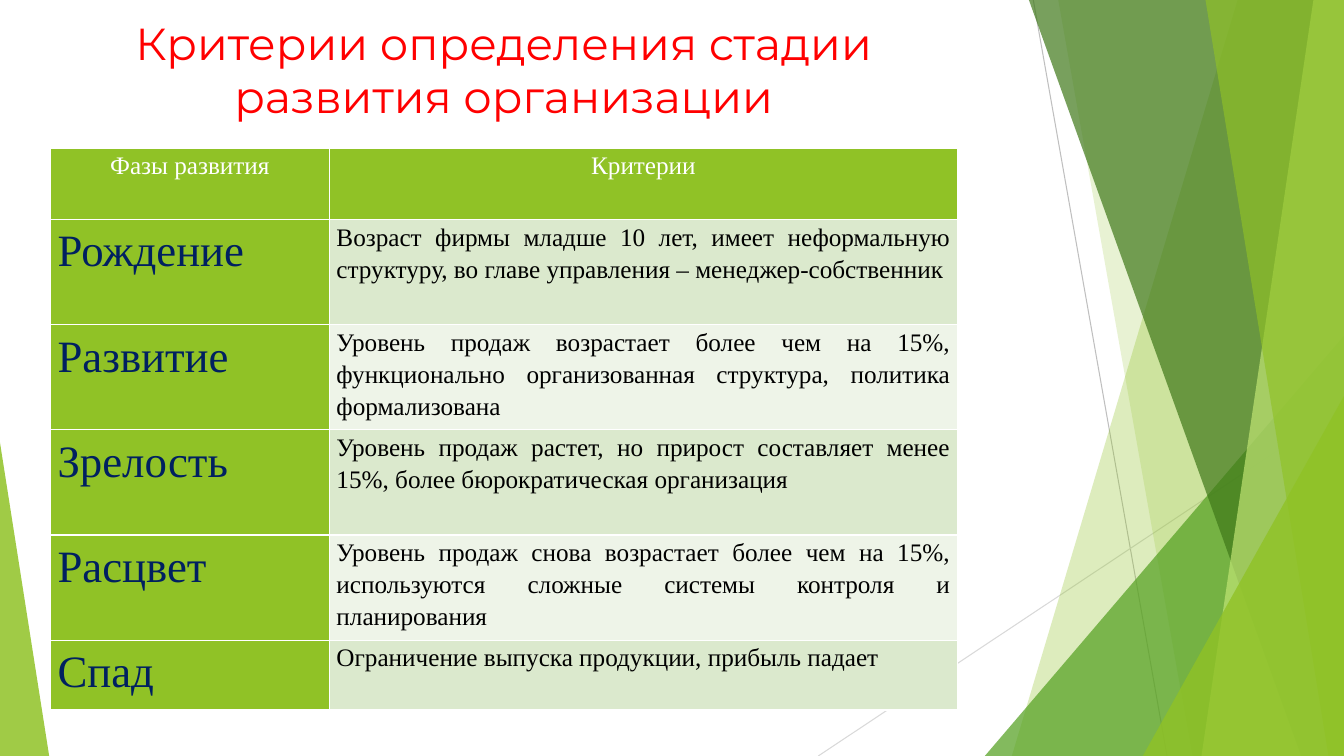
from lxml import etree
from pptx import Presentation
from pptx.dml.color import RGBColor
from pptx.enum.shapes import MSO_CONNECTOR, MSO_SHAPE
from pptx.enum.text import MSO_ANCHOR, MSO_AUTO_SIZE, PP_ALIGN
from pptx.oxml import parse_xml
from pptx.oxml.ns import nsdecls, qn
from pptx.util import Cm, Pt

STRAIGHT, TRIANGLE = MSO_CONNECTOR.STRAIGHT, MSO_SHAPE.ISOSCELES_TRIANGLE
CENTER, JUSTIFY, MIDDLE = PP_ALIGN.CENTER, PP_ALIGN.JUSTIFY, MSO_ANCHOR.MIDDLE
NO_FIT = MSO_AUTO_SIZE.NONE
W, H = 33.87, 19.05
GREEN = "90C226"


def rgb(value):
    return RGBColor.from_string(value)


def paint(s, color, opacity):
    s.shadow.inherit = False
    s.line.fill.background()
    s.fill.solid()
    s.fill.fore_color.rgb = rgb(color)
    clr = s.fill._xPr.find(qn("a:solidFill"))[0]
    etree.SubElement(clr, qn("a:alpha")).set("val", str(opacity * 1000))


prs = Presentation()
prs.slide_width, prs.slide_height = Cm(W), Cm(H)
slide = prs.slides.add_slide(prs.slide_layouts[5])
shapes = slide.shapes

# Thin background lines
for x1, y1, x2, y2, color in [(26.04, 0, 29.41, H, "BFBFBF"),
                              (W, 10.24, 20.62, H, "D9D9D9")]:
    line = shapes.add_connector(STRAIGHT, Cm(x1), Cm(y1), Cm(x2), Cm(y2))
    line.line.color.rgb = rgb(color)
    line.line.width = Pt(0.75)
    etree.SubElement(line._element.spPr, qn("a:effectLst"))

# Translucent facets: bands (top x, bottom x) reach the right edge,
# triangles (left, top, width, apex) stand on the bottom edge
facets = [
    ("band", (31.19, 25.5), GREEN, 30),
    ("band", (26.67, 30.05), GREEN, 20),
    ("triangle", (24.82, 8.46, 9.05, 1), "54A021", 72),
    ("band", (25.93, 32.79), "3F7819", 70),
    ("band", (33.1, 30.28), "C0E474", 70),
    ("band", (30.38, 33.48), GREEN, 65),
    ("triangle", (28.8, 9.98, 5.07, 1), GREEN, 80),
    ("triangle", (0, 11.15, 1.24, 0), GREEN, 85),
]
for kind, dims, color, opacity in facets:
    if kind == "band":
        top_x, bottom_x = dims
        fb = shapes.build_freeform(Cm(top_x), 0)
        fb.add_line_segments([(Cm(x), Cm(y)) for x, y in
                              [(W, 0), (W, H), (bottom_x, H)]])
        s = fb.convert_to_shape()
    else:
        left, top, width, apex = dims
        s = shapes.add_shape(TRIANGLE, Cm(left), Cm(top), Cm(width), Cm(H - top))
        s.adjustments[0] = apex
    paint(s, color, opacity)

# Title
title = shapes.title
place = {"left": 1.27, "top": 0.76, "width": 22.86, "height": 1.96}
for name, value in place.items():
    setattr(title, name, Cm(value))
tf = title.text_frame
tf.word_wrap, tf.auto_size, tf.vertical_anchor = True, NO_FIT, MIDDLE
p = tf.paragraphs[0]
p.alignment = CENTER
r = p.add_run()
r.text = "Критерии определения стадии развития организации"
for name, value in {"name": "Montserrat", "size": Pt(32)}.items():
    setattr(r.font, name, value)
r.font.color.rgb = rgb("FF0000")

# Table of phases and criteria
rows = [
    ("Фазы развития", "Критерии"),
    ("Рождение", "Возраст фирмы младше 10 лет, имеет неформальную структуру, "
                 "во главе управления – менеджер-собственник"),
    ("Развитие", "Уровень продаж возрастает более чем на 15%, функционально "
                 "организованная структура, политика формализована"),
    ("Зрелость", "Уровень продаж растет, но прирост составляет менее 15%, "
                 "более бюрократическая организация"),
    ("Расцвет", "Уровень продаж снова возрастает более чем на 15%, "
                "используются сложные системы контроля и планирования"),
    ("Спад", "Ограничение выпуска продукции, прибыль падает"),
]
heights = [1.8] + [2.65] * 4 + [1.76]
table = shapes.add_table(len(rows), 2, Cm(1.27), Cm(3.73),
                         Cm(22.86), Cm(sum(heights))).table
for col, width in zip(table.columns, (7.03, 15.83)):
    col.width = Cm(width)
margins = {"margin_left": Cm(0.18), "margin_right": Cm(0.18),
           "margin_top": 0, "margin_bottom": 0}

for i, row in enumerate(rows):
    table.rows[i].height = Cm(heights[i])
    for j, text in enumerate(row):
        if i == 0:
            size, color, fill = 18, "FFFFFF", GREEN
        elif j == 0:
            size, color, fill = 32, "002060", GREEN
        else:
            size, color, fill = 18, "000000", "DBE9CD" if i % 2 else "EEF4E8"
        cell = table.cell(i, j)
        for name, value in margins.items():
            setattr(cell, name, value)
        cell.fill.solid()
        cell.fill.fore_color.rgb = rgb(fill)
        p = cell.text_frame.paragraphs[0]
        p.alignment = JUSTIFY if i else CENTER
        p.line_spacing = 1.15
        r = p.add_run()
        r.text = text
        style = {"name": "Times New Roman", "size": Pt(size), "bold": False}
        for name, value in style.items():
            setattr(r.font, name, value)
        r.font.color.rgb = rgb(color)

        # White cell borders
        tc_pr = cell._tc.get_or_add_tcPr()
        for k, side in enumerate(("lnL", "lnR", "lnT", "lnB")):
            tc_pr.insert(k, parse_xml(
                f'<a:{side} {nsdecls("a")} w="{Pt(1)}"><a:solidFill>'
                f'<a:srgbClr val="FFFFFF"/></a:solidFill></a:{side}>'))

prs.save("out.pptx")
